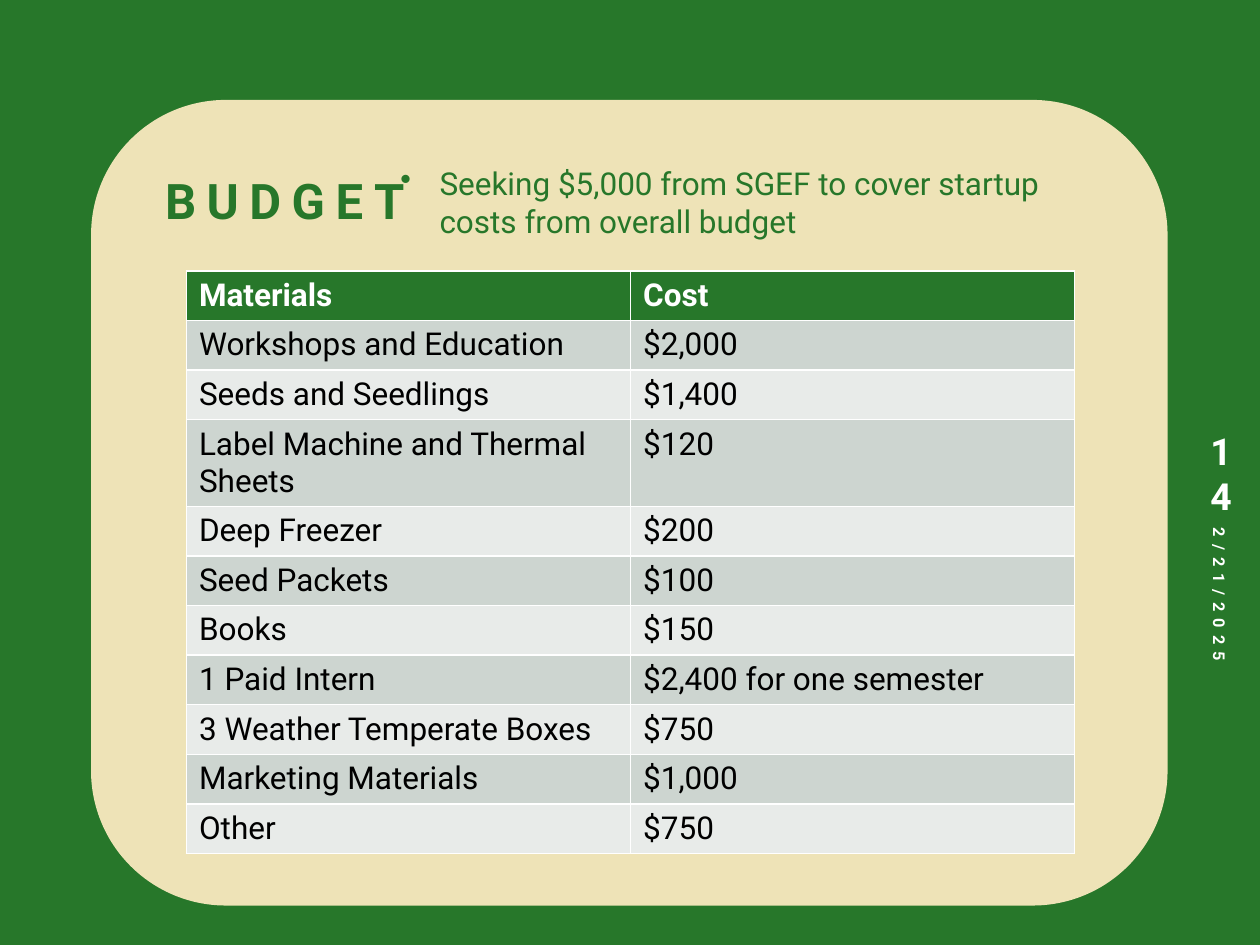
from typing import NamedTuple

from lxml.etree import SubElement
from pptx import Presentation
from pptx.dml.color import RGBColor
from pptx.enum.shapes import MSO_SHAPE
from pptx.enum.text import MSO_ANCHOR, MSO_AUTO_SIZE, PP_ALIGN
from pptx.oxml.ns import qn
from pptx.util import Inches, Pt

GREEN = RGBColor(0x27, 0x77, 0x2A)
CREAM = RGBColor(0xEE, 0xE3, 0xB7)
WHITE = RGBColor(0xFF, 0xFF, 0xFF)
BLACK = RGBColor(0x00, 0x00, 0x00)
DARK_BAND = RGBColor(0xCD, 0xD5, 0xD0)
LIGHT_BAND = RGBColor(0xE8, 0xEB, 0xE9)
FONT = "Roboto"


class Box(NamedTuple):
    left: float
    top: float
    width: float
    height: float

    def lengths(self):
        return [Inches(value) for value in self]


class BudgetLine(NamedTuple):
    material: str
    cost: str


HEADER = BudgetLine("Materials", "Cost")
BUDGET = [
    BudgetLine("Workshops and Education", "$2,000"),
    BudgetLine("Seeds and Seedlings", "$1,400"),
    BudgetLine("Label Machine and Thermal Sheets", "$120"),
    BudgetLine("Deep Freezer", "$200"),
    BudgetLine("Seed Packets", "$100"),
    BudgetLine("Books", "$150"),
    BudgetLine("1 Paid Intern", "$2,400 for one semester"),
    BudgetLine("3 Weather Temperate Boxes", "$750"),
    BudgetLine("Marketing Materials", "$1,000"),
    BudgetLine("Other", "$750"),
]


def write(text_frame, text: str, size: float, color: RGBColor,
          bold: bool = False, spacing: float = 0):
    """Set the only paragraph of a frame; spacing is between letters, in points."""
    text_frame.text = text
    paragraph = text_frame.paragraphs[0]
    font = paragraph.font
    font.name, font.size, font.bold = FONT, Pt(size), bold
    font.color.rgb = color
    if spacing:
        properties = paragraph.runs[0].font._element
        properties.set("spc", str(int(spacing * 100)))
    return paragraph


def add_text(slide, box: Box, text: str, size: float, color: RGBColor,
             bold: bool = False, spacing: float = 0, anchor=MSO_ANCHOR.MIDDLE):
    shape = slide.shapes.add_textbox(*box.lengths())
    shape.text_frame.word_wrap = True
    shape.text_frame.vertical_anchor = anchor
    write(shape.text_frame, text, size, color, bold, spacing)
    return shape


def add_bullet(paragraph, indent: float) -> None:
    properties = paragraph._p.get_or_add_pPr()
    properties.set("marL", str(Inches(indent)))
    properties.set("indent", str(-Inches(indent)))
    bullet = SubElement(properties, qn("a:buChar"))
    bullet.set("char", "•")
    default_font = properties.find(qn("a:defRPr"))
    default_font.addprevious(bullet)


def add_panel(slide) -> None:
    """Add the rounded panel behind everything else."""
    panel = slide.shapes.add_shape(MSO_SHAPE.ROUNDED_RECTANGLE,
                                   *Box(0.73, 0.8, 8.53, 6.38).lengths())
    panel.shadow.inherit = False
    panel.fill.solid()
    panel.fill.fore_color.rgb = CREAM
    panel.line.color.rgb = CREAM
    panel.line.width = Pt(1)
    slide.shapes._spTree.insert(2, panel._element)


def format_title(title) -> None:
    title.left, title.top, title.width, title.height = Box(1.21, 0.93, 7.58, 0.94).lengths()
    frame = title.text_frame
    frame.auto_size = MSO_AUTO_SIZE.NONE
    frame.vertical_anchor = MSO_ANCHOR.BOTTOM
    paragraph = write(frame, "BUDGET", 28, GREEN, bold=True, spacing=6)
    paragraph.alignment = PP_ALIGN.LEFT
    paragraph.line_spacing = 1.2


def add_budget_table(slide) -> None:
    lines = [HEADER, *BUDGET]
    table = slide.shapes.add_table(len(lines), len(HEADER),
                                   *Box(1.48, 2.15, 7.05, 4.7).lengths()).table
    for number, (row, line) in enumerate(zip(table.rows, lines)):
        is_header = number == 0
        wraps = len(line.material) > 30
        row.height = Inches(0.67 if wraps else 0.38)
        band = GREEN if is_header else DARK_BAND if number % 2 else LIGHT_BAND
        for cell, text in zip(row.cells, line):
            cell.fill.solid()
            cell.fill.fore_color.rgb = band
            write(cell.text_frame, text, 18, WHITE if is_header else BLACK, bold=is_header)


def main() -> None:
    presentation = Presentation()
    presentation.slide_width, presentation.slide_height = Inches(10), Inches(7.5)
    slide = presentation.slides.add_slide(presentation.slide_layouts[5])
    slide.background.fill.solid()
    slide.background.fill.fore_color.rgb = GREEN

    add_panel(slide)
    format_title(slide.shapes.title)
    add_budget_table(slide)

    date = add_text(slide, Box(8.22, 5.4, 2.92, 0.3), "2/21/2025", 9.3, WHITE,
                    bold=True, spacing=4)
    date.rotation = 90
    page_number = add_text(slide, Box(9.43, 3.52, 0.52, 0.47), "14", 21.3, WHITE, bold=True)
    page_number.text_frame.paragraphs[0].alignment = PP_ALIGN.CENTER

    request = add_text(slide, Box(3.08, 1.25, 5.82, 0.71),
                       "Seeking $5,000 from SGEF to cover startup costs from overall budget",
                       18, GREEN, anchor=MSO_ANCHOR.TOP)
    request.text_frame.auto_size = MSO_AUTO_SIZE.SHAPE_TO_FIT_TEXT
    add_bullet(request.text_frame.paragraphs[0], 0.31)

    presentation.save("out.pptx")


if __name__ == "__main__":
    main()
